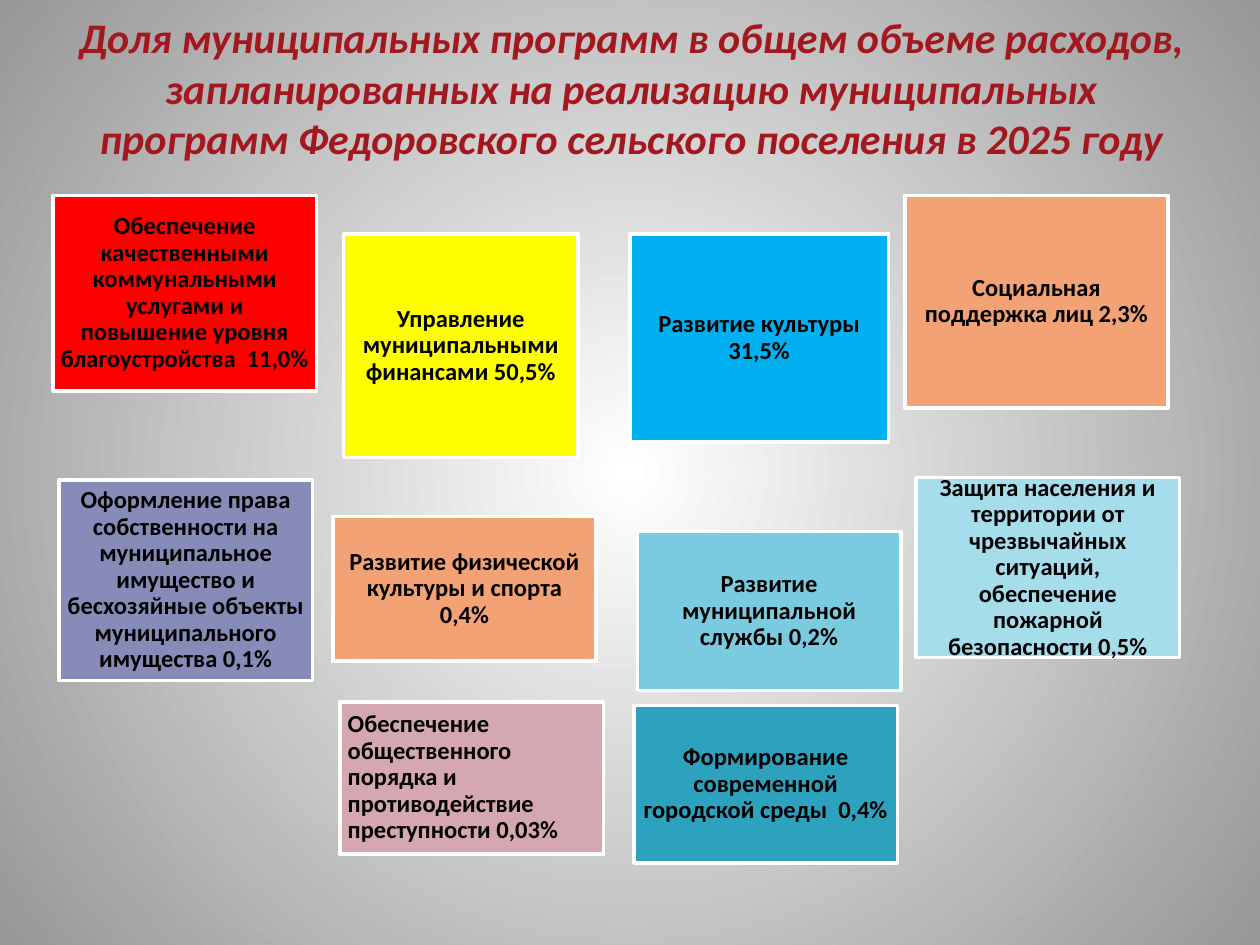
from dataclasses import dataclass

from lxml import etree
from pptx import Presentation
from pptx import util as u
from pptx.dml.color import RGBColor
from pptx.enum import shapes, text
from pptx.oxml.ns import qn

WHITE = RGBColor(0xFF, 0xFF, 0xFF)
BLACK = RGBColor(0x00, 0x00, 0x00)
EDGE_GRAY = RGBColor(0x97, 0x97, 0x97)
TITLE_RED = RGBColor(0xA3, 0x17, 0x1E)
RED = RGBColor(0xFF, 0x00, 0x00)
YELLOW = RGBColor(0xFF, 0xFF, 0x00)
BLUE = RGBColor(0x00, 0xB0, 0xF0)
ORANGE = RGBColor(0xF3, 0xA2, 0x76)
VIOLET = RGBColor(0x87, 0x8B, 0xB8)
SKY = RGBColor(0x7A, 0xCB, 0xE0)
PALE_SKY = RGBColor(0xA6, 0xDD, 0xEA)
PINK = RGBColor(0xD5, 0xA7, 0xB1)
TEAL = RGBColor(0x2D, 0xA2, 0xBF)

TITLE_FONT = {"name": "Calibri", "size": u.Pt(24), "bold": True, "italic": True}
BOX_FONT = {"name": "Calibri", "size": u.Pt(14), "bold": True}
BOX_MARGINS = {f"margin_{side}": u.Cm(0.15) for side in ("left", "top", "right", "bottom")}
BOX_WIDTH = 5.31


@dataclass
class Program:
    """A municipal programme box; lengths in centimetres."""
    label: str
    fill: RGBColor
    left: float
    top: float
    height: float
    width: float = BOX_WIDTH
    align: text.PP_ALIGN = text.PP_ALIGN.CENTER


PROGRAMS = [
    # Top row
    Program("Обеспечение качественными коммунальными услугами и повышение уровня "
            "благоустройства  11,0%", RED, 1.07, 3.94, 3.94),
    Program("Управление муниципальными финансами 50,5%", YELLOW, 6.93, 4.72, 4.5, 4.72),
    Program("Развитие культуры 31,5%", BLUE, 12.7, 4.72, 4.19, 5.21),
    Program("Социальная поддержка лиц 2,3%", ORANGE, 18.24, 3.94, 4.29),
    # Middle row
    Program("Оформление права собственности на муниципальное имущество и бесхозяйные "
            "объекты муниципального имущества 0,1%", VIOLET, 1.19, 9.68, 4.04, 5.11),
    Program("Развитие физической культуры и спорта 0,4%", ORANGE, 6.71, 10.41, 2.92),
    Program("Развитие муниципальной службы 0,2%", SKY, 12.85, 10.72, 3.2),
    Program("Защита населения и территории от чрезвычайных ситуаций, обеспечение "
            "пожарной безопасности 0,5%", PALE_SKY, 18.47, 9.63, 3.63),
    # Bottom row
    Program("Обеспечение общественного порядка и противодействие преступности 0,03%",
            PINK, 6.86, 14.15, 3.07, align=text.PP_ALIGN.LEFT),
    Program("Формирование современной городской среды  0,4%", TEAL, 12.78, 14.22, 3.18),
]


def set_attrs(obj, values: dict) -> None:
    for name, value in values.items():
        setattr(obj, name, value)


def write_text(tf, label: str, font: dict, color: RGBColor, align: text.PP_ALIGN):
    set_attrs(tf, {"word_wrap": True, "auto_size": text.MSO_AUTO_SIZE.NONE,
                   "vertical_anchor": text.MSO_ANCHOR.MIDDLE})
    p = tf.paragraphs[0]
    p.alignment = align
    r = p.add_run()
    r.text = label
    set_attrs(r.font, font)
    r.font.color.rgb = color
    return p


def paint_background(s) -> None:
    fill = s.background.fill
    fill.gradient()
    for stop, color in zip(fill.gradient_stops, (WHITE, EDGE_GRAY)):
        stop.color.rgb = color
    # Turn the linear gradient into a circular one around the centre
    grad = s._element.find(".//" + qn("a:gradFill"))
    circle = etree.Element(qn("a:path"), {"path": "circle"})
    etree.SubElement(circle, qn("a:fillToRect"), dict.fromkeys("ltrb", "50000"))
    grad.replace(grad.find(qn("a:lin")), circle)


def add_title(s, label: str) -> None:
    sp = s.shapes.title
    set_attrs(sp, {"left": u.Cm(1.3), "top": u.Cm(0),
                   "width": u.Cm(22.86), "height": u.Cm(3.53)})
    write_text(sp.text_frame, label, TITLE_FONT, TITLE_RED, text.PP_ALIGN.CENTER)


def add_program(s, program: Program) -> None:
    sp = s.shapes.add_shape(shapes.MSO_SHAPE.RECTANGLE, u.Cm(program.left), u.Cm(program.top),
                            u.Cm(program.width), u.Cm(program.height))
    sp.shadow.inherit = False
    sp.fill.solid()
    sp.fill.fore_color.rgb = program.fill
    sp.line.color.rgb = WHITE
    sp.line.width = u.Pt(2)
    set_attrs(sp.text_frame, BOX_MARGINS)
    p = write_text(sp.text_frame, program.label, BOX_FONT, BLACK, program.align)
    p.line_spacing = 0.9


def main() -> None:
    prs = Presentation()
    prs.slide_width, prs.slide_height = u.Cm(25.4), u.Cm(19.05)
    s = prs.slides.add_slide(prs.slide_layouts.get_by_name("Title Only"))
    paint_background(s)
    add_title(s, "Доля муниципальных программ в общем объеме расходов, запланированных на "
                 "реализацию муниципальных программ Федоровского сельского поселения в 2025 году")
    for program in PROGRAMS:
        add_program(s, program)
    prs.save("out.pptx")


if __name__ == "__main__":
    main()
